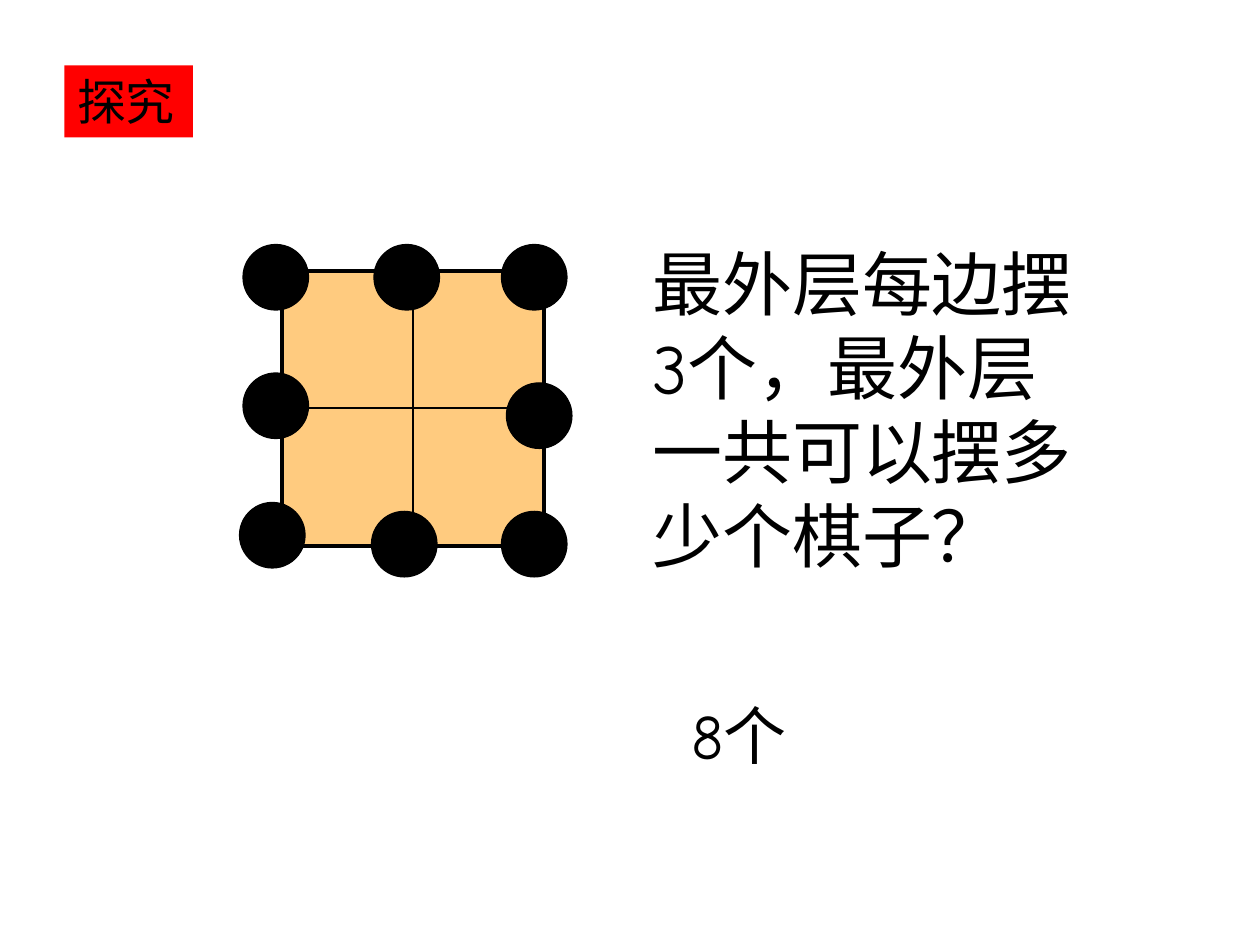
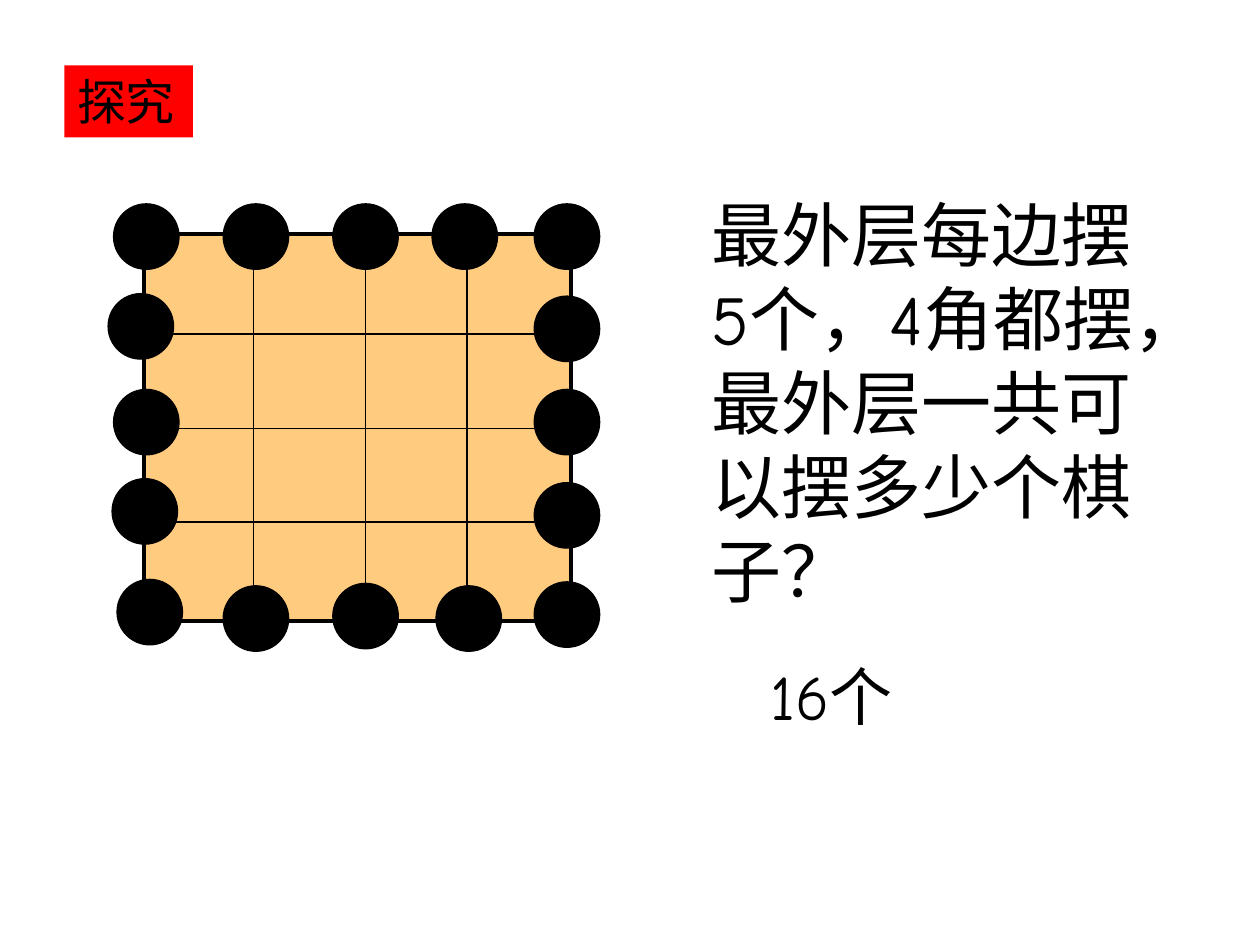
import pptx
import pptx.util
import pptx.dml.color
import pptx.enum.shapes
import pptx.enum.text
import pptx.oxml.ns
from lxml import etree

Cm, Pt = pptx.util.Cm, pptx.util.Pt
SHAPE = pptx.enum.shapes.MSO_SHAPE
BLACK, RED, ORANGE = "000000", "FF0000", "FF9900"
FONT = "Comic Neue"
STONE = 1.32


def paint(color_format, value):
    color_format.solid()
    color_format.fore_color.rgb = pptx.dml.color.RGBColor.from_string(value)


def write(sp, text, size, box):
    sp.left, sp.top, sp.width, sp.height = [Cm(v) for v in box]
    tf = sp.text_frame
    tf.word_wrap = True
    tf.auto_size = pptx.enum.text.MSO_AUTO_SIZE.NONE
    tf.vertical_anchor = pptx.enum.text.MSO_ANCHOR.TOP
    tf.text = text
    p = tf.paragraphs[0]
    p.alignment = pptx.enum.text.PP_ALIGN.LEFT
    p.font.name = FONT
    p.font.size = Pt(size)
    paint(p.font.fill, BLACK)


boards = [
    {
        "xs": [5.69, 8.33, 10.97],
        "ys": [5.46, 8.23, 11],
        "stones": [
            (4.9, 4.93), (7.54, 4.93), (10.11, 4.93),
            (4.9, 7.52), (10.21, 7.72),
            (4.83, 10.13), (7.49, 10.31), (10.11, 10.31),
        ],
        "question": ("最外层每边摆3个，最外层一共可以摆多少个棋子？", 40, (12.9, 4.72, 9.6, 7.04)),
        "answer": ("8个", 36, (13.69, 13.92, 3, 1.78)),
    },
    {
        "xs": [2.9, 5.11, 7.37, 9.42, 11.51],
        "ys": [4.72, 6.73, 8.64, 10.52, 12.52],
        "stones": [
            (2.29, 4.11), (4.5, 4.11), (6.71, 4.11), (8.71, 4.11), (10.77, 4.11),
            (2.18, 5.92), (10.77, 5.97),
            (2.29, 7.85), (10.77, 7.85),
            (2.26, 9.65), (10.77, 9.73),
            (2.36, 11.68), (4.5, 11.81), (6.71, 11.76), (8.79, 11.81), (10.77, 11.73),
        ],
        "question": ("最外层每边摆5个，4角都摆，最外层一共可以摆多少个棋子？", 40, (14.1, 3.73, 9.6, 8.71)),
        "answer": ("16个", 36, (15.29, 13.13, 5.38, 1.78)),
    },
]

prs = pptx.Presentation()
prs.slide_width, prs.slide_height = Cm(25.4), Cm(19.05)

for board in boards:
    s = prs.slides.add_slide(prs.slide_layouts[5])
    paint(s.shapes.title.fill, RED)
    write(s.shapes.title, "探究", 28, (1.3, 1.32, 2.59, 1.45))

    xs, ys = board["xs"], board["ys"]
    for top, bottom in zip(ys, ys[1:]):
        for left, right in zip(xs, xs[1:]):
            sp = s.shapes.add_shape(SHAPE.RECTANGLE, Cm(left), Cm(top), Cm(right - left), Cm(bottom - top))
            sp.shadow.inherit = False
            sp.line.fill.background()
            paint(sp.fill, ORANGE)
            rgb = sp.fill._xPr.find(".//" + pptx.oxml.ns.qn("a:srgbClr"))
            etree.SubElement(rgb, pptx.oxml.ns.qn("a:alpha"), val="50000")

    rows = [(xs[0], y, xs[-1], y, y in (ys[0], ys[-1])) for y in ys]
    columns = [(x, ys[0], x, ys[-1], x in (xs[0], xs[-1])) for x in xs]
    for x1, y1, x2, y2, is_edge in rows + columns:
        line = s.shapes.add_connector(
            pptx.enum.shapes.MSO_CONNECTOR.STRAIGHT, Cm(x1), Cm(y1), Cm(x2), Cm(y2))
        paint(line.line.fill, BLACK)
        line.line.width = Pt(2.25 if is_edge else 1)
        etree.SubElement(line._element.spPr, pptx.oxml.ns.qn("a:effectLst"))

    for left, top in board["stones"]:
        sp = s.shapes.add_shape(SHAPE.OVAL, Cm(left), Cm(top), Cm(STONE), Cm(STONE))
        sp.shadow.inherit = False
        paint(sp.fill, BLACK)
        paint(sp.line.fill, BLACK)
        sp.line.width = Pt(0.75)

    for text, size, box in (board["question"], board["answer"]):
        write(s.shapes.add_textbox(0, 0, 0, 0), text, size, box)

prs.save("out.pptx")
